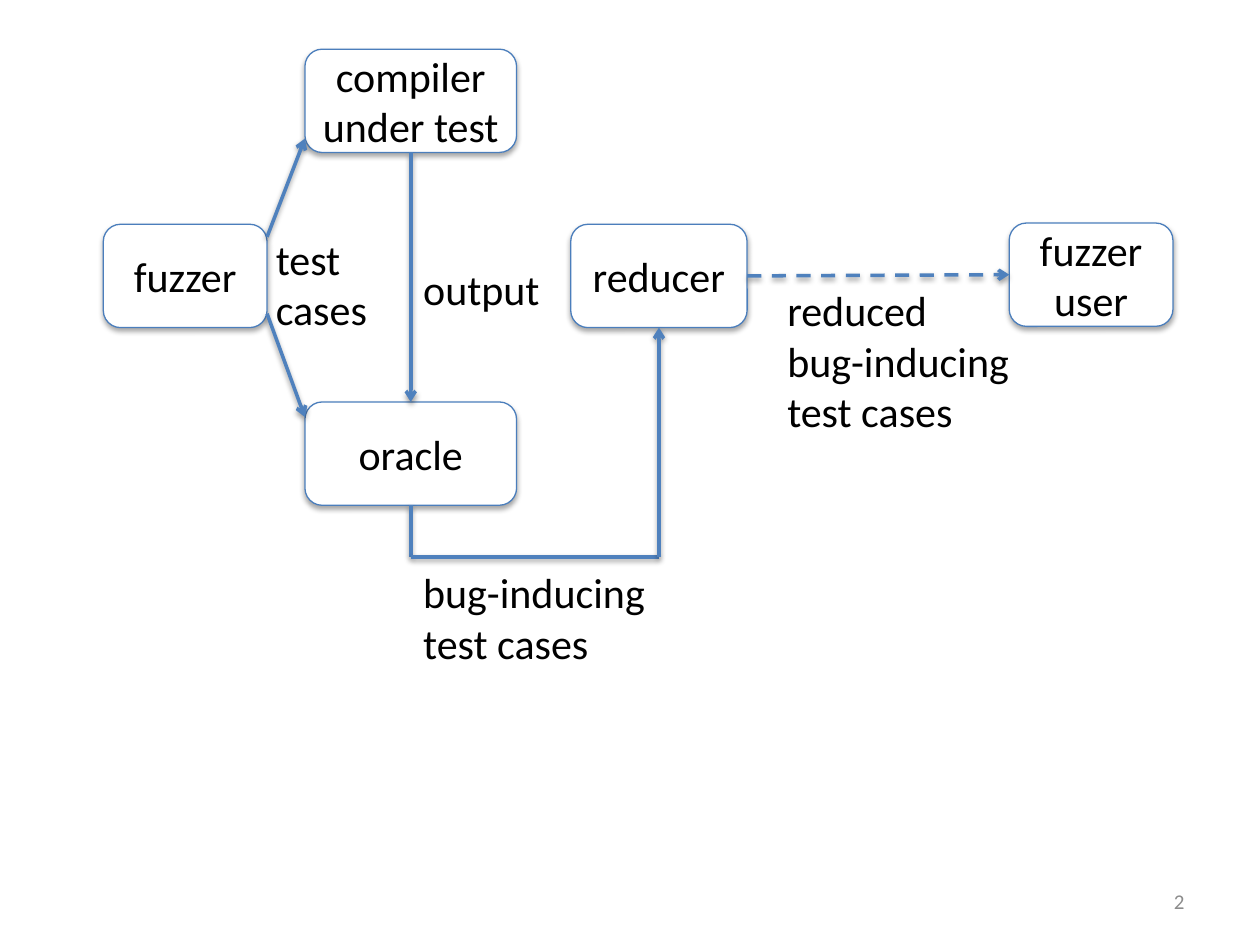
from lxml import etree
from pptx import Presentation
from pptx.dml.color import RGBColor
from pptx.enum.dml import MSO_LINE
from pptx.enum.shapes import MSO_CONNECTOR, MSO_SHAPE
from pptx.enum.text import MSO_ANCHOR, PP_ALIGN
from pptx.oxml.ns import qn
from pptx.util import Inches, Pt

ROUND = MSO_SHAPE.ROUNDED_RECTANGLE
LINE = MSO_CONNECTOR.STRAIGHT
DASH = MSO_LINE.DASH
MID = MSO_ANCHOR.MIDDLE
LEFT, MIDDLE, RIGHT = PP_ALIGN.LEFT, PP_ALIGN.CENTER, PP_ALIGN.RIGHT

WIDTH, HEIGHT = Inches(10), Inches(7.5)
COL, ROW = WIDTH / 10, HEIGHT / 7.5
TALL = 0.82
TOP, BOTTOM, END = 0, 2, 3
START = 1


def color(code):
    return RGBColor.from_string(code)


def place(*grid):
    return [round(n * unit) for n, unit in zip(grid, (COL, ROW) * 2)]


def shade(shape, alpha, gap):
    props = shape.element.spPr
    effects = etree.SubElement(props, qn("a:effectLst"))
    outer = etree.SubElement(
        effects, qn("a:outerShdw"), blurRad=str(Pt(3.1)),
        dist=str(Pt(gap)), dir="5400000", rotWithShape="0")
    black = etree.SubElement(outer, qn("a:srgbClr"), val="000000")
    etree.SubElement(black, qn("a:alpha"), val=str(alpha * 1000))


def write(frame, text, align=LEFT, size=24, code="000000"):
    frame.word_wrap = True
    frame.text = text
    for para in frame.paragraphs:
        para.alignment = align
        for run in para.runs:
            run.font.name = "Calibri"
            run.font.size = Pt(size)
            run.font.color.rgb = color(code)


def add_box(slide, text, left, top, wide):
    box = slide.shapes.add_shape(ROUND, *place(left, top, wide, TALL))
    box.fill.solid()
    box.fill.fore_color.rgb = color("FFFFFF")
    box.line.color.rgb = color("4B7EBC")
    box.line.width = Pt(0.75)
    shade(box, 35, 1.8)
    write(box.text_frame, text, MIDDLE)
    box.text_frame.vertical_anchor = MID
    return box


def add_label(slide, text, *grid):
    label = slide.shapes.add_textbox(*place(*grid))
    write(label.text_frame, text)


def add_line(slide, start, end, arrow=True, dash=False):
    line = slide.shapes.add_connector(LINE, *place(*start), *place(*end))
    line.line.color.rgb = color("4F81BD")
    line.line.width = Pt(2)
    if dash:
        line.line.dash_style = DASH
    if arrow:
        stroke = line.element.spPr.find(qn("a:ln"))
        etree.SubElement(stroke, qn("a:tailEnd"), type="arrow")
    shade(line, 38, 1.6)
    return line


def join(line, source, out, target, into):
    line.begin_connect(source, out)
    line.end_connect(target, into)


def add_number(slide, text):
    box = slide.shapes.add_textbox(*place(7.17, 6.95, 2.33, 0.4))
    write(box.text_frame, text, RIGHT, 12, "8C8C8C")
    box.text_frame.vertical_anchor = MID


def main():
    deck = Presentation()
    deck.slide_width, deck.slide_height = WIDTH, HEIGHT
    slide = deck.slides.add_slide(deck.slide_layouts[6])
    add_number(slide, "2")

    add_box(slide, "fuzzer", 0.82, 1.78, 1.3)
    tested = add_box(slide, "compiler under test", 2.42, 0.39, 1.68)
    oracle = add_box(slide, "oracle", 2.42, 3.19, 1.68)
    reducer = add_box(slide, "reducer", 4.53, 1.78, 1.4)
    user = add_box(slide, "fuzzer user", 8.01, 1.77, 1.3)

    add_line(slide, (2.12, 1.88), (2.42, 1.1))
    add_line(slide, (2.12, 2.49), (2.42, 3.31))
    output = add_line(slide, (3.26, 1.21), (3.26, 3.19))
    join(output, tested, BOTTOM, oracle, TOP)
    result = add_line(slide, (5.93, 2.19), (8.01, 2.18), dash=True)
    join(result, reducer, END, user, START)

    bend, turn = (3.26, 4.42), (5.23, 4.42)
    add_line(slide, (3.26, 4.01), bend, arrow=False)
    add_line(slide, bend, turn, arrow=False)
    add_line(slide, turn, (5.23, 2.6))

    add_label(slide, "test\ncases", 2.09, 1.8, 0.95, 0.91)
    add_label(slide, "output", 3.26, 2.04, 1.28, 0.5)
    add_label(slide, "bug-inducing test cases", 3.26, 4.45, 2.15, 0.91)
    add_label(slide, "reduced\nbug-inducing test cases", 6.15, 2.21, 2.16, 1.31)
    deck.save("out.pptx")


if __name__ == "__main__":
    main()
